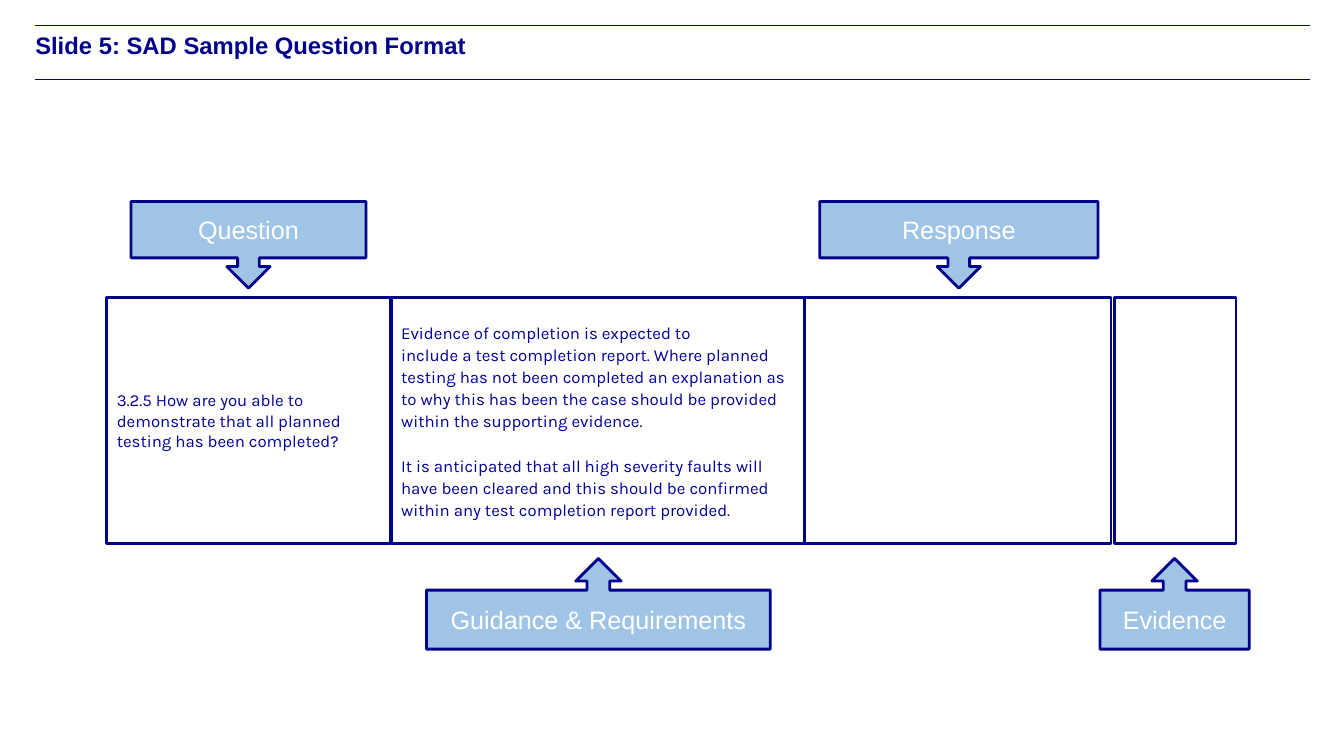
import pptx
import pptx.util
import pptx.dml.color
import pptx.enum.shapes
import pptx.enum.text
import pptx.oxml

Inches, Pt = pptx.util.Inches, pptx.util.Pt
SHAPE = pptx.enum.shapes.MSO_SHAPE
ALIGN = pptx.enum.text.PP_ALIGN
ANCHOR = pptx.enum.text.MSO_ANCHOR

COLOURS = {"navy": "00008B", "ink": "000099", "sky": "A0C4E5", "white": "FFFFFF"}
EMPTY_EFFECTS = '<a:effectLst xmlns:a="http://schemas.openxmlformats.org/drawingml/2006/main"/>'


class QuestionSlide:
    """Holds the style and the current slide."""

    heading_font, body_font = "Arial", "Karla"

    def __init__(self, deck):
        self.page = deck.slides.add_slide(deck.slide_layouts[5])

    def colour(self, name):
        return pptx.dml.color.RGBColor.from_string(COLOURS[name])

    def style(self, para, font, size, colour, bold=False):
        para.font.name = font
        para.font.size = Pt(size)
        para.font.bold = bold
        para.font.color.rgb = self.colour(colour)

    def rule(self, top):
        line = self.page.shapes.add_connector(
            pptx.enum.shapes.MSO_CONNECTOR.STRAIGHT,
            Inches(0.35), Inches(top), Inches(12.99), Inches(top))
        line.line.color.rgb = self.colour("navy")
        line.line.width = Pt(0.5)
        line._element.spPr.append(pptx.oxml.parse_xml(EMPTY_EFFECTS))

    def title(self, text):
        title = self.page.shapes.title
        title.left, title.top = Inches(0.35), Inches(0.3)
        title.width, title.height = Inches(12.64), Inches(0.49)
        frame = title.text_frame
        frame.margin_left = frame.margin_right = 0
        frame.margin_top = frame.margin_bottom = 0
        frame.vertical_anchor = ANCHOR.TOP
        frame.auto_size = pptx.enum.text.MSO_AUTO_SIZE.NONE
        frame.text = text
        frame.paragraphs[0].alignment = ALIGN.LEFT
        self.style(frame.paragraphs[0], self.heading_font, 17, "navy", bold=True)

    def outlined(self, kind, left, top, width, height, fill):
        box = self.page.shapes.add_shape(
            kind, Inches(left), Inches(top), Inches(width), Inches(height))
        box.shadow.inherit = False
        box.fill.solid()
        box.fill.fore_color.rgb = self.colour(fill)
        box.line.color.rgb = self.colour("navy")
        box.line.width = Pt(2)
        box.text_frame.word_wrap = True
        box.text_frame.vertical_anchor = ANCHOR.MIDDLE
        return box

    def panel(self, left, width, texts=(), spacing=1.0, gap_before=None):
        box = self.outlined(SHAPE.RECTANGLE, left, 2.95, width, 2.44, "white")
        frame = box.text_frame
        for index, text in enumerate(texts):
            para = frame.add_paragraph() if index else frame.paragraphs[0]
            para.text = text
            para.alignment = ALIGN.LEFT
            para.line_spacing = spacing
            if index == gap_before:
                para.space_before = Pt(16)
            self.style(para, self.body_font, 12, "ink")

    def callout(self, kind, left, top, width, height, text):
        box = self.outlined(kind, left, top, width, height, "sky")
        box.text_frame.text = text
        para = box.text_frame.paragraphs[0]
        para.alignment = ALIGN.CENTER
        self.style(para, self.heading_font, 18, "white")


def main():
    deck = pptx.Presentation()
    deck.slide_width, deck.slide_height = Inches(13.33), Inches(7.5)
    slide = QuestionSlide(deck)

    # Heading between two rules
    for top in (0.25, 0.79):
        slide.rule(top)
    slide.title("Slide 5: SAD Sample Question Format")

    # Row of panels
    slide.panel(1.06, 2.81, [
        "3.2.5 How are you able to demonstrate that all planned testing has been completed?"])
    slide.panel(3.88, 4.11, [
        "Evidence of completion is expected to",
        "include a test completion report. Where planned testing has not been completed "
        "an explanation as to why this has been the case should be provided within the "
        "supporting evidence.",
        "It is anticipated that all high severity faults will have been cleared and this "
        "should be confirmed within any test completion report provided.",
    ], spacing=1.1, gap_before=2)
    slide.panel(7.98, 3.04)
    slide.panel(11.05, 1.21)

    # Labels above and below the row, pointing at their panels
    for left, width, text in ((1.3, 2.33, "Question"), (8.13, 2.76, "Response")):
        slide.callout(SHAPE.DOWN_ARROW_CALLOUT, left, 2, width, 0.86, text)
    for left, width, text in ((4.23, 3.41, "Guidance & Requirements"),
                              (10.91, 1.48, "Evidence")):
        slide.callout(SHAPE.UP_ARROW_CALLOUT, left, 5.54, width, 0.9, text)

    deck.save("out.pptx")


if __name__ == "__main__":
    main()
